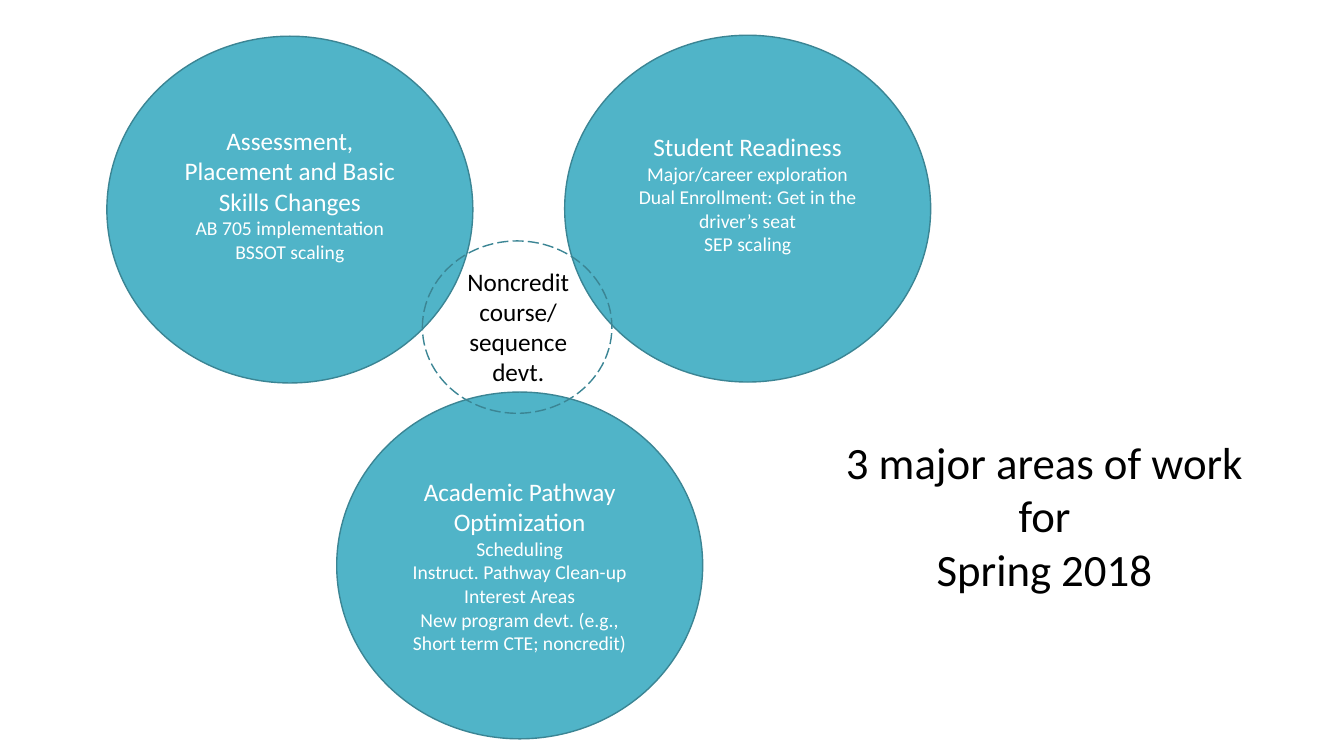
from pptx import Presentation
from pptx.dml.color import RGBColor
from pptx.enum.dml import MSO_LINE
from pptx.enum.shapes import MSO_SHAPE
from pptx.enum.text import MSO_ANCHOR, MSO_AUTO_SIZE, PP_ALIGN
from pptx.util import Inches, Pt

OVAL = MSO_SHAPE.OVAL
LONG_DASH = MSO_LINE.LONG_DASH
MIDDLE = MSO_ANCHOR.MIDDLE
CENTER = PP_ALIGN.CENTER
FIT_SHAPE = MSO_AUTO_SIZE.SHAPE_TO_FIT_TEXT

TEAL = RGBColor(0x50, 0xB4, 0xC8)
DARK_TEAL = RGBColor(0x3B, 0x85, 0x94)
WHITE = RGBColor(0xFF, 0xFF, 0xFF)
BLACK = RGBColor(0x00, 0x00, 0x00)

FONT = "Calibri"
HEADING_SIZE, DETAIL_SIZE, TITLE_SIZE = 18, 14, 32

# The slide is a grid of 100 columns by 100 rows.
SLIDE_WIDTH, SLIDE_HEIGHT = Inches(13.33), Inches(7.5)
COLUMN, ROW = SLIDE_WIDTH / 100, SLIDE_HEIGHT / 100

AREA_SIZE = (27.23, 45.87)
OVERLAP_SIZE = (14.1, 22.8)

# Centre, room kept free below the text in rows, heading, details
AREAS = [
    ((21.57, 27.73), 4, "Assessment, Placement and Basic Skills Changes",
     ["AB 705 implementation", "BSSOT scaling"]),
    ((55.63, 27.6), 4, "Student Readiness",
     ["Major/career exploration",
      "Dual Enrollment: Get in the driver’s seat", "SEP scaling"]),
    ((38.67, 74.8), 0, "Academic Pathway Optimization",
     ["Scheduling", "Instruct. Pathway Clean-up", "Interest Areas",
      "New program devt. (e.g., Short term CTE; noncredit)"]),
]


def box_around(center, size):
    """Return left, top, width and height for a centre and size on the grid."""
    (x, y), (width, height) = center, size
    return (round((x - width / 2) * COLUMN), round((y - height / 2) * ROW),
            round(width * COLUMN), round(height * ROW))


def write_lines(text_frame, lines, color):
    """Write (text, size) pairs as centred paragraphs."""
    text_frame.text = "\n".join(text for text, _ in lines)
    for paragraph, (_, size) in zip(text_frame.paragraphs, lines):
        paragraph.alignment = CENTER
        paragraph.font.name = FONT
        paragraph.font.size = Pt(size)
        paragraph.font.color.rgb = color


def add_circle(slide, center, size):
    circle = slide.shapes.add_shape(OVAL, *box_around(center, size))
    circle.shadow.inherit = False
    circle.line.color.rgb = DARK_TEAL
    circle.line.width = Pt(1)
    return circle


def add_area(slide, center, rows_below, heading, details):
    circle = add_circle(slide, center, AREA_SIZE)
    circle.fill.solid()
    circle.fill.fore_color.rgb = TEAL
    text_frame = circle.text_frame
    text_frame.word_wrap = True
    text_frame.vertical_anchor = MIDDLE
    text_frame.margin_bottom = round(Inches(0.05) + rows_below * ROW)
    lines = [(heading, HEADING_SIZE)]
    lines += [(detail, DETAIL_SIZE) for detail in details]
    write_lines(text_frame, lines, WHITE)


def add_overlap(slide, center):
    circle = add_circle(slide, center, OVERLAP_SIZE)
    circle.fill.background()
    circle.line.dash_style = LONG_DASH


def add_label(slide, center, size, texts, font_size, wrap):
    text_frame = slide.shapes.add_textbox(*box_around(center, size)).text_frame
    text_frame.word_wrap = wrap
    text_frame.auto_size = FIT_SHAPE
    write_lines(text_frame, [(text, font_size) for text in texts], BLACK)


def main():
    presentation = Presentation()
    presentation.slide_width = SLIDE_WIDTH
    presentation.slide_height = SLIDE_HEIGHT
    slide = presentation.slides.add_slide(presentation.slide_layouts[6])

    for area in AREAS:
        add_area(slide, *area)
    add_overlap(slide, (38.48, 43.27))
    add_label(slide, (38.56, 43.27), (9.45, 17.47),
              ["Noncredit course/", "sequence devt."], HEADING_SIZE, True)
    add_label(slide, (77.72, 68.27), (31.36, 22.93),
              ["3 major areas of work", "for", "Spring 2018"],
              TITLE_SIZE, False)

    presentation.save("out.pptx")


if __name__ == "__main__":
    main()
